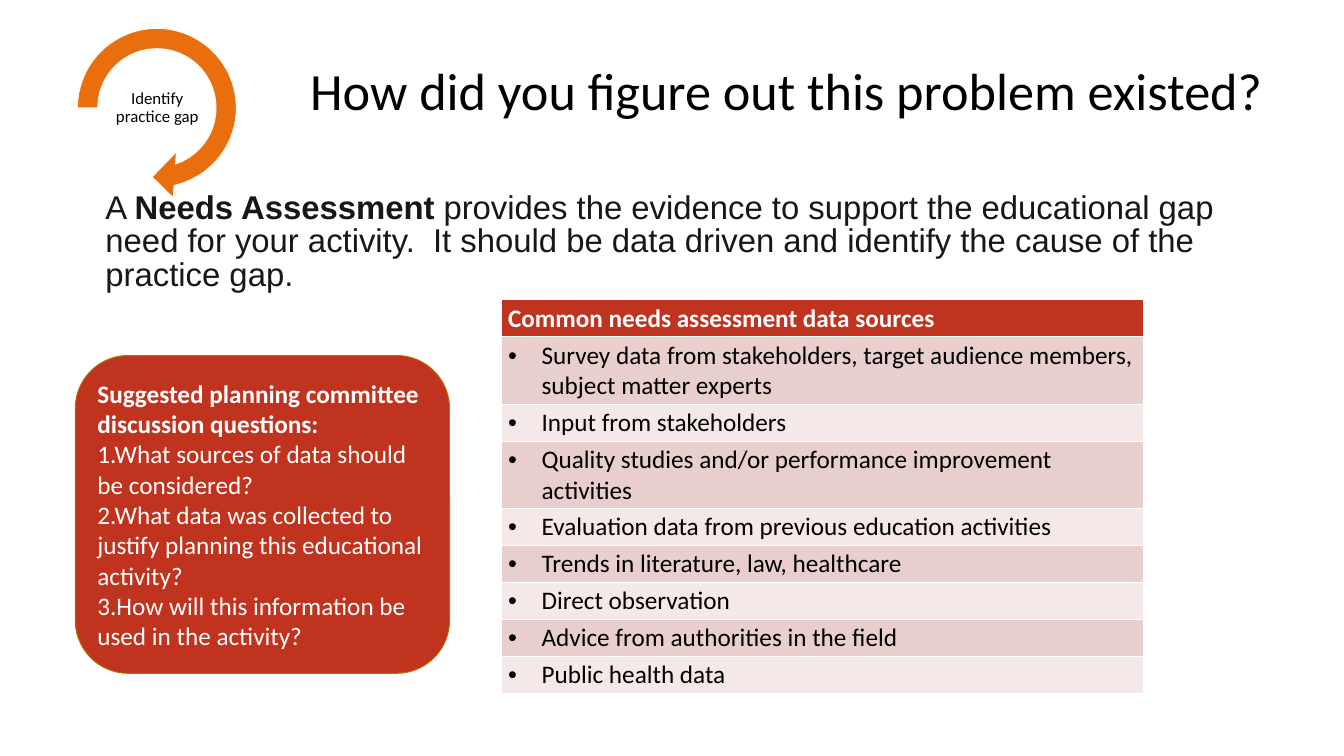
import pptx
import pptx.util
import pptx.dml.color
import pptx.enum.shapes
import pptx.enum.text
from lxml import etree
from dataclasses import dataclass

Inches, Pt = pptx.util.Inches, pptx.util.Pt
SHAPE = pptx.enum.shapes.MSO_SHAPE
ALIGN = pptx.enum.text.PP_ALIGN
ANCHOR = pptx.enum.text.MSO_ANCHOR
RGB = pptx.dml.color.RGBColor.from_string


@dataclass(frozen=True)
class Theme:
    black: str = "000000"
    white: str = "FFFFFF"
    ink: str = "171717"
    red: str = "C0331F"
    gold: str = "B97000"
    orange: str = "E96E0D"
    bands: tuple = ("E8CECD", "F4E8E8")
    title: float = 56
    lead: float = 35.2
    body: float = 27
    label: float = 18


T = Theme()


def style(p, size, color, bold=False, font="Calibri"):
    for r in p.runs:
        r.font.name, r.font.size, r.font.bold = font, Pt(size), bold
        r.font.color.rgb = RGB(color)


def add_text(x, y, w, h, anchor, margins=(0.1, 0.05, 0.1, 0.05)):
    tf = s.shapes.add_textbox(Inches(x), Inches(y), Inches(w), Inches(h)).text_frame
    tf.word_wrap = True
    tf.vertical_anchor = anchor
    tf.margin_left, tf.margin_top, tf.margin_right, tf.margin_bottom = map(Inches, margins)
    return tf


prs = pptx.Presentation()
prs.slide_width, prs.slide_height = Inches(20), Inches(11.25)
s = prs.slides.add_slide(prs.slide_layouts[6])

# Title
p = add_text(3.67, 0.94, 16.07, 0.89, ANCHOR.MIDDLE).paragraphs[0]
p.text = "How did you figure out this problem existed?"
p.alignment, p.line_spacing = ALIGN.CENTER, 0.9
style(p, T.title, T.black)

# Circular arrow with its label
sp = s.shapes.add_shape(SHAPE.CIRCULAR_ARROW, Inches(0.96), Inches(0.23), Inches(2.75), Inches(2.75))
for i, value in enumerate((0.11, 11.42, 45, 108, 0.125)):
    sp.adjustments[i] = value
sp.shadow.inherit = False
sp.fill.solid()
sp.fill.fore_color.rgb = RGB(T.orange)
sp.line.color.rgb = RGB(T.white)
sp.line.width = Pt(1)

p = add_text(1.57, 1.22, 1.54, 0.77, ANCHOR.MIDDLE, (0.01,) * 4).paragraphs[0]
p.text = "Identify practice gap"
p.alignment, p.line_spacing = ALIGN.CENTER, 0.9
style(p, T.label, T.black)

# Lead statement
p = add_text(1.57, 3.69, 17.43, 0.71, ANCHOR.BOTTOM, (0, 0.04, 0.07, 0.04)).paragraphs[0]
p.line_spacing = 0.85
for text in (
    "A ",
    "Needs Assessment ",
    "provides the evidence to support the educational gap need for your activity.  "
    "It should be data driven and identify the cause of the practice gap.",
):
    p.add_run().text = text
style(p, T.lead, T.ink, font="Arial")
p.runs[1].font.bold = True

# Discussion questions
sp = s.shapes.add_shape(SHAPE.ROUNDED_RECTANGLE, Inches(1.12), Inches(5.29), Inches(5.57), Inches(4.73))
sp.shadow.inherit = False
sp.fill.solid()
sp.fill.fore_color.rgb = RGB(T.red)
sp.line.color.rgb = RGB(T.gold)
sp.line.width = Pt(1)
tf = sp.text_frame
tf.word_wrap = True
tf.vertical_anchor = ANCHOR.MIDDLE
tf.text = "\n".join((
    "Suggested planning committee discussion questions:",
    "1.What sources of data should be considered?",
    "2.What data was collected to justify planning this educational activity?",
    "3.How will this information be used in the activity?",
))
for i, p in enumerate(tf.paragraphs):
    p.alignment = ALIGN.LEFT
    style(p, T.body, T.white, bold=i == 0)

# Data sources table
rows = (
    "Common needs assessment data sources",
    "Survey data from stakeholders, target audience members, subject matter experts",
    "Input from stakeholders",
    "Quality studies and/or performance improvement activities",
    "Evaluation data from previous education activities",
    "Trends in literature, law, healthcare",
    "Direct observation",
    "Advice from authorities in the field",
    "Public health data",
)
row_h = 0.41
table = s.shapes.add_table(len(rows), 1, Inches(7.46), Inches(4.46),
                           Inches(9.56), Inches(row_h * len(rows))).table
for i, text in enumerate(rows):
    table.rows[i].height = Inches(row_h)
    cell = table.cell(i, 0)
    header = i == 0
    cell.fill.solid()
    cell.fill.fore_color.rgb = RGB(T.red if header else T.bands[(i - 1) % 2])
    p = cell.text_frame.paragraphs[0]
    p.text = text
    if not header:
        pPr = p._p.get_or_add_pPr()
        pPr.set("marL", str(Inches(0.5)))
        pPr.set("indent", str(Inches(-0.5)))
        ns = pptx.oxml.ns.qn
        etree.SubElement(pPr, ns("a:buFont")).set("typeface", "Arial")
        etree.SubElement(pPr, ns("a:buChar")).set("char", "•")
    style(p, T.body, T.white if header else T.black, bold=header)

prs.save("out.pptx")
